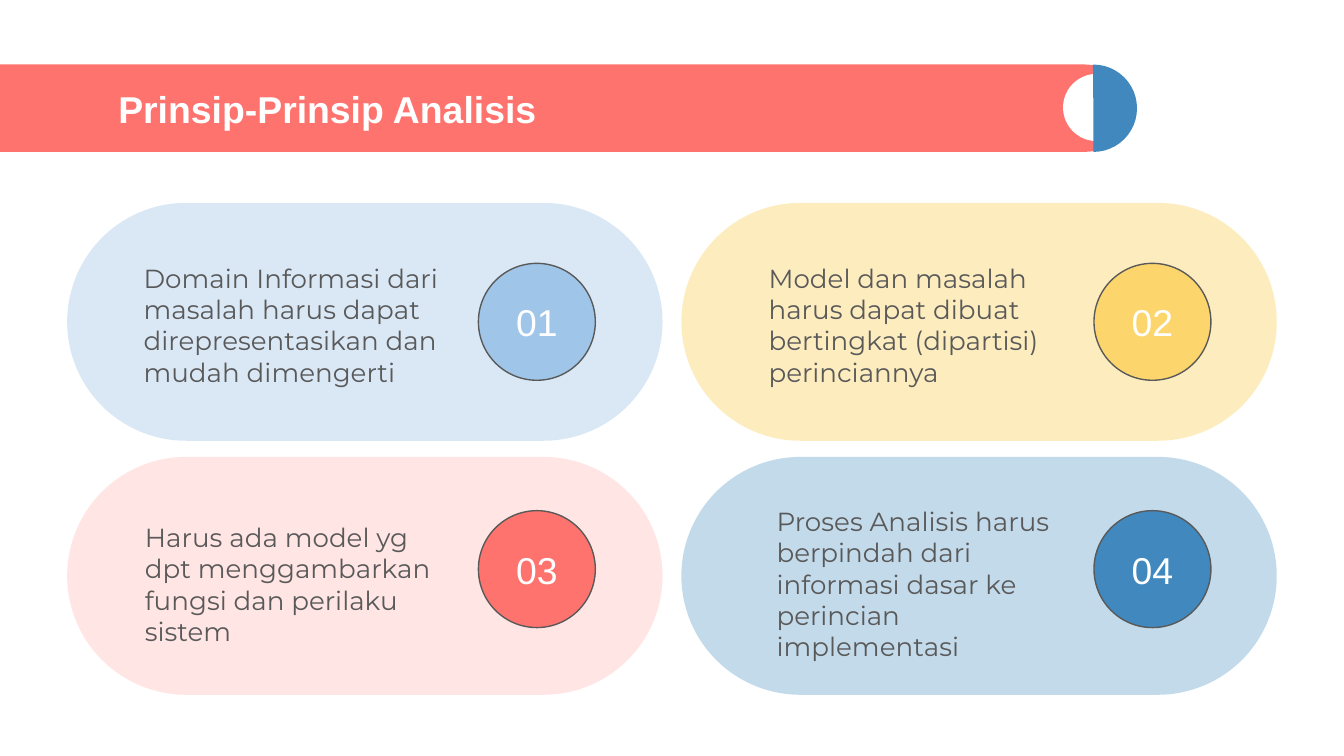
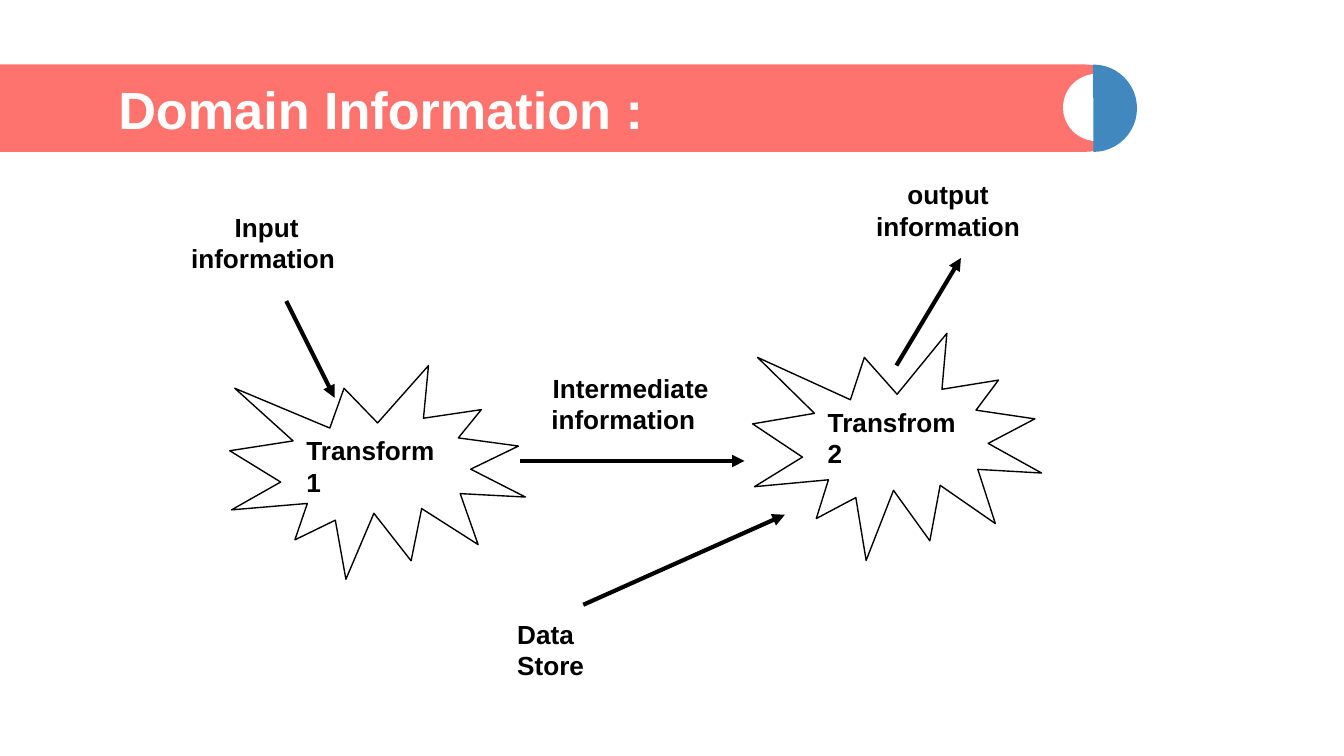
from lxml import etree
from pptx import Presentation
from pptx.dml.color import RGBColor
from pptx.enum import shapes, text
from pptx.oxml import ns
from pptx.util import Inches, Pt

WHITE = RGBColor(0xFF, 0xFF, 0xFF)
BLACK = RGBColor(0x00, 0x00, 0x00)
GRAY = RGBColor(0x59, 0x59, 0x59)
CORAL = RGBColor(0xFF, 0x73, 0x6E)
BLUE = RGBColor(0x40, 0x88, 0xBE)
SKY = RGBColor(0x9F, 0xC5, 0xE8)
AMBER = RGBColor(0xFB, 0xBE, 0x18)
YELLOW = RGBColor(0xFC, 0xD6, 0x6C)

SHAPE = shapes.MSO_SHAPE
ALIGN = text.PP_ALIGN
ANCHOR = text.MSO_ANCHOR


# Shared helpers
def add_child(parent, tag, **attributes):
    return etree.SubElement(parent, ns.qn(tag), **attributes)


def add_shape(page, kind, box, fill, line=None, opacity=None):
    shape = page.shapes.add_shape(kind, *map(Inches, box))
    shape.shadow.inherit = False
    shape.fill.solid()
    shape.fill.fore_color.rgb = fill
    if opacity is not None:
        color = shape.element.spPr.find(".//" + ns.qn("a:srgbClr"))
        add_child(color, "a:alpha", val=str(opacity * 1000))
    if line is None:
        shape.line.fill.background()
    else:
        shape.line.color.rgb = line
        shape.line.width = Pt(0.75)
    return shape


def write(shape, words, size, color, font="Arial", bold=False,
          align=ALIGN.LEFT, anchor=ANCHOR.TOP, inset=0.05):
    frame = shape.text_frame
    frame.text = words
    frame.word_wrap = True
    frame.auto_size = text.MSO_AUTO_SIZE.NONE
    frame.vertical_anchor = anchor
    frame.margin_left = frame.margin_right = Inches(0.1)
    frame.margin_top = frame.margin_bottom = Inches(inset)
    para = frame.paragraphs[0]
    para.alignment = align
    for span in para.runs:
        span.font.name = font
        span.font.size = Pt(size)
        span.font.bold = bold
        span.font.color.rgb = color
    return para


def add_label(page, words, box, *style, **options):
    label = page.shapes.add_textbox(*map(Inches, box))
    return write(label, words, *style, **options)


def add_arrow(page, start, end):
    arrow = page.shapes.add_connector(
        shapes.MSO_CONNECTOR.STRAIGHT, *map(Inches, start + end))
    arrow.line.color.rgb = BLACK
    arrow.line.width = Pt(2.25)
    properties = arrow.element.spPr
    add_child(properties.find(ns.qn("a:ln")), "a:tailEnd", type="triangle")
    add_child(properties, "a:effectLst")


# Title band, kept on the layout so that every slide shows it
def add_band(page, layout):
    left, top, height = -0.32, 0.48, 0.65
    band = add_shape(page, SHAPE.ROUNDED_RECTANGLE, (left, top, 8.72, height), CORAL)
    band.adjustments[0] = 0.5
    disc = add_shape(page, SHAPE.OVAL, (left + 8.23, top + 0.07, 0.5, 0.5), WHITE)
    half = add_shape(page, SHAPE.PIE, (left + 8.13, top, height, height), BLUE)
    half.adjustments[0], half.adjustments[1] = 53.67, 162
    half.rotation = 180
    for part in (band, disc, half):
        layout.shapes.element.append(part.element)


def add_page(deck, layout, heading, size):
    page = deck.slides.add_slide(layout)
    title = page.shapes.title
    title.left, title.top, title.width, title.height = map(
        Inches, (0.78, 0.6, 6.97, 0.41))
    write(title, heading, size, WHITE, bold=True, anchor=ANCHOR.MIDDLE, inset=0.1)
    return page


# Slide 1: four numbered principles
CARD_WIDTH, CARD_HEIGHT = 4.43, 1.77
CIRCLE_SIZE = 0.87

# Words, tint, opacity, circle colour, text box (x, y, width) in the card
PRINCIPLES = [
    ("Domain Informasi dari masalah harus dapat direpresentasikan dan mudah dimengerti",
     SKY, 38, SKY, (0.47, 0.34, 2.91)),
    ("Model dan masalah harus dapat dibuat bertingkat (dipartisi) perinciannya",
     AMBER, 28, YELLOW, (0.55, 0.34, 2.32)),
    ("Harus ada model yg dpt menggambarkan fungsi dan perilaku sistem",
     CORAL, 18, CORAL, (0.48, 0.38, 2.34)),
    ("Proses Analisis harus berpindah dari informasi dasar ke perincian implementasi",
     BLUE, 31, BLUE, (0.61, 0.26, 2.32)),
]


def add_card(page, left, top, number, circle_spot, principle):
    words, tint, opacity, accent, (text_x, text_y, text_width) = principle
    circle_x, circle_y = circle_spot
    card = add_shape(page, SHAPE.ROUNDED_RECTANGLE,
                     (left, top, CARD_WIDTH, CARD_HEIGHT), tint, opacity=opacity)
    card.adjustments[0] = 0.5
    para = add_label(page, words, (left + text_x, top + text_y, text_width, 0.89),
                     14, GRAY, font="Montserrat", inset=0.1)
    para.space_after = Pt(16)
    circle = add_shape(page, SHAPE.OVAL,
                       (left + circle_x, top + circle_y, CIRCLE_SIZE, CIRCLE_SIZE),
                       accent, GRAY)
    write(circle, f"{number:02}", 20, WHITE, align=ALIGN.CENTER,
          anchor=ANCHOR.MIDDLE, inset=0.1)


def add_principles(page, left, top):
    for index, principle in enumerate(PRINCIPLES):
        row, column = divmod(index, 2)
        circle_spot = ((3.06, 3.07)[column], (0.45, 0.4)[row])
        add_card(page, left + column * (CARD_WIDTH + 0.14),
                 top + row * (CARD_HEIGHT + 0.12),
                 index + 1, circle_spot, principle)


# Slide 2: information flow, placed relative to the diagram's corner
BURSTS = [
    ("Transform 1", (0.41, 1.44, 2.2, 1.59)),
    ("Transfrom 2", (4.3, 1.2, 2.15, 1.69)),
]
ARROWS = [
    ((0.83, 0.96), (1.19, 1.68)),
    ((2.57, 2.15), (4.24, 2.15)),
    ((3.04, 3.22), (4.54, 2.55)),
    ((5.37, 1.44), (5.85, 0.64)),
]
LABELS = [
    ("Input information ", (0, 0.24, 1.37, 0.72), ALIGN.CENTER),
    ("output information", (5.07, 0, 1.37, 0.64), ALIGN.CENTER),
    (" Intermediate information ", (2.62, 1.44, 1.49, 0.64), ALIGN.CENTER),
    ("Data Store", (2.45, 3.27, 1.14, 0.48), ALIGN.JUSTIFY),
]


def add_flow(page, left, top):
    def place(x, y, *size):
        return (left + x, top + y, *size)

    for words, box in BURSTS:
        burst = add_shape(page, SHAPE.EXPLOSION1, place(*box), WHITE, BLACK)
        write(burst, words, 14, BLACK, bold=True)
    for start, end in ARROWS:
        add_arrow(page, place(*start), place(*end))
    for words, box, align in LABELS:
        add_label(page, words, place(*box), 14, BLACK, bold=True, align=align)


def main():
    deck = Presentation()
    # Widescreen, 16:9
    deck.slide_width, deck.slide_height = Inches(10), Inches(10 * 9 / 16)
    layout = deck.slide_layouts.get_by_name("Title Only")

    page = add_page(deck, layout, "Prinsip-Prinsip Analisis", 20)
    add_band(page, layout)
    add_principles(page, 0.5, 1.51)

    page = add_page(deck, layout, "Domain Information :", 28)
    add_flow(page, 1.3, 1.28)

    deck.save("out.pptx")


if __name__ == "__main__":
    main()
